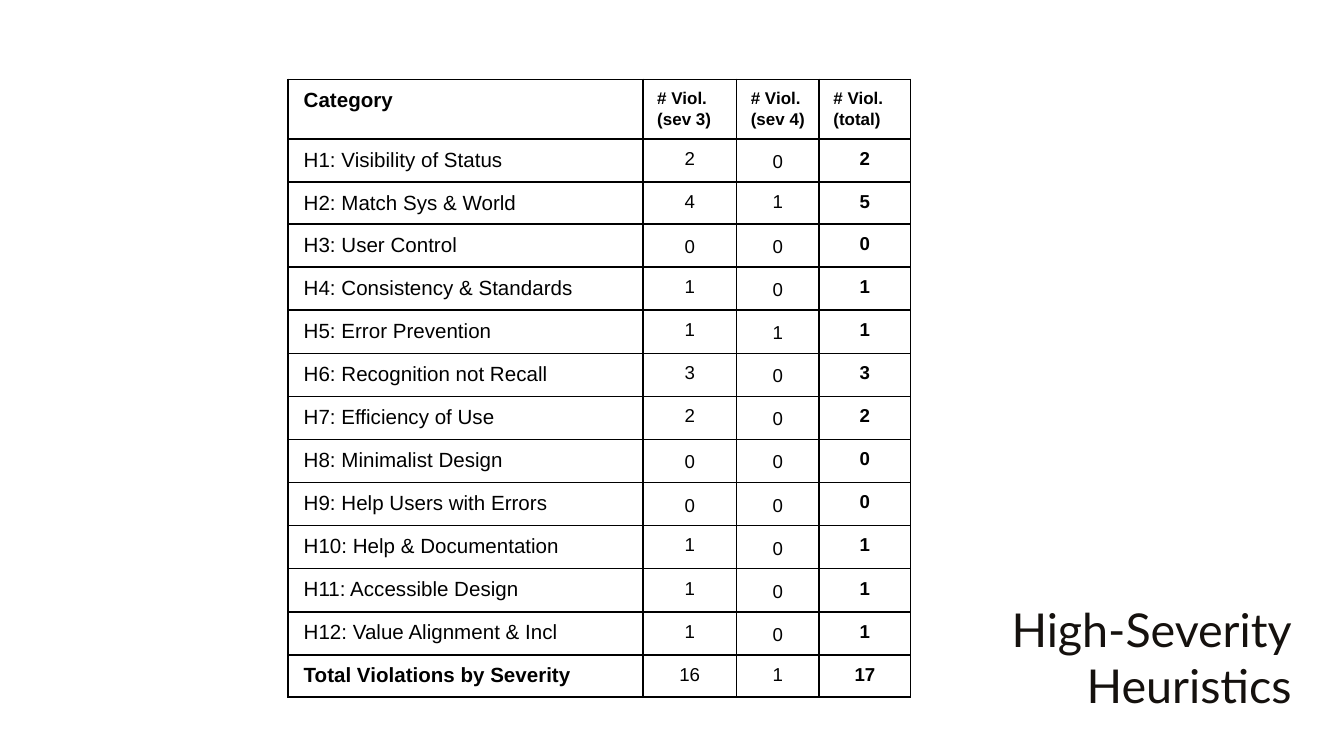
"""Builds the slide with the table of high-severity heuristic violations."""
from lxml.etree import SubElement
from pptx import Presentation
from pptx.dml.color import RGBColor
from pptx.enum.text import MSO_ANCHOR, MSO_AUTO_SIZE, PP_ALIGN
from pptx.oxml.ns import qn
from pptx.util import Cm, Pt

COLORS = {"title": "15110E", "ink": "000000"}
TITLE = ["High-Severity", "Heuristics"]
HEADER = ["Category", "# Viol.\n(sev 3)", "# Viol.\n(sev 4)", "# Viol.\n(total)"]
VIOLATIONS = [
    ("H1: Visibility of Status", 2, 0, 2),
    ("H2: Match Sys & World", 4, 1, 5),
    ("H3: User Control", 0, 0, 0),
    ("H4: Consistency & Standards", 1, 0, 1),
    ("H5: Error Prevention", 1, 1, 1),
    ("H6: Recognition not Recall", 3, 0, 3),
    ("H7: Efficiency of Use", 2, 0, 2),
    ("H8: Minimalist Design", 0, 0, 0),
    ("H9: Help Users with Errors", 0, 0, 0),
    ("H10: Help & Documentation", 1, 0, 1),
    ("H11: Accessible Design", 1, 0, 1),
    ("H12: Value Alignment & Incl", 1, 0, 1),
]
TOTALS = ("Total Violations by Severity", 16, 1, 17)
COLUMN_WIDTHS = [6.71, 1.77, 1.56, 1.73]
HEADER_HEIGHT, ROW_HEIGHT = 1.04, 0.67
CELL_MARGIN = 0.18


def write(frame, lines, font="Arial", size=10, color="ink", bold=False,
          align=PP_ALIGN.LEFT, indent=0, before=0, spacing=1.0):
    for index, line in enumerate(lines):
        paragraph = frame.add_paragraph() if index else frame.paragraphs[0]
        paragraph.text = line
        paragraph.alignment = align
        paragraph.line_spacing = spacing
        paragraph.space_before = Pt(before if index else 0)
        properties = paragraph._p.get_or_add_pPr()
        properties.set("marL", str(Cm(indent)))
        properties.set("indent", "0")
        run_font = paragraph.runs[0].font
        run_font.name, run_font.size, run_font.bold = font, Pt(size), bold
        run_font.color.rgb = RGBColor.from_string(COLORS[color])


def outline(cell):
    properties = cell._tc.get_or_add_tcPr()
    for side in ("lnL", "lnR", "lnT", "lnB"):
        border = SubElement(properties, qn(f"a:{side}"), w=str(Pt(1)))
        fill = SubElement(border, qn("a:solidFill"))
        SubElement(fill, qn("a:srgbClr"), val=COLORS["ink"])


def cell_format(row, column, value):
    if column == 0:
        return {"size": 11, "bold": row in (0, len(VIOLATIONS) + 1), "indent": 0.12}
    if row == 0:
        return {"size": 9.1, "bold": True, "indent": 0.09, "before": 1.4}
    loose = column < 3 and (value == 0 or (row, column) == (5, 2))
    return {"bold": column == 3, "align": PP_ALIGN.CENTER,
            "spacing": 1.15 if loose else 1.0}


def add_violations(slide):
    rows = [HEADER, *VIOLATIONS, TOTALS]
    heights = [HEADER_HEIGHT] + [ROW_HEIGHT] * (len(rows) - 1)
    table = slide.shapes.add_table(
        len(rows), len(HEADER), Cm(5.44), Cm(1.5),
        Cm(sum(COLUMN_WIDTHS)), Cm(sum(heights))).table
    table.first_row = table.horz_banding = False
    for column, width in zip(table.columns, COLUMN_WIDTHS):
        column.width = Cm(width)
    for row, height in zip(table.rows, heights):
        row.height = Cm(height)
    for r, values in enumerate(rows):
        for c, value in enumerate(values):
            cell = table.cell(r, c)
            cell.margin_left = cell.margin_right = Cm(CELL_MARGIN)
            cell.margin_top = cell.margin_bottom = Cm(CELL_MARGIN)
            outline(cell)
            cell.fill.background()
            write(cell.text_frame, str(value).split("\n"), **cell_format(r, c, value))


def add_title(slide):
    title = slide.shapes.title
    title.left, title.top = Cm(13.92), Cm(11.1)
    title.width, title.height = Cm(10.74), Cm(2.54)
    frame = title.text_frame
    frame.word_wrap = True
    frame.auto_size = MSO_AUTO_SIZE.NONE
    frame.vertical_anchor = MSO_ANCHOR.TOP
    frame.margin_left = frame.margin_right = Cm(0.25)
    frame.margin_top = frame.margin_bottom = Cm(0.25)
    write(frame, TITLE, font="Lato", size=25, color="title", align=PP_ALIGN.RIGHT)


def main():
    deck = Presentation()
    deck.slide_width, deck.slide_height = Cm(25.4), Cm(14.29)
    slide = deck.slides.add_slide(deck.slide_layouts[5])
    add_title(slide)
    add_violations(slide)
    deck.save("out.pptx")


if __name__ == "__main__":
    main()
